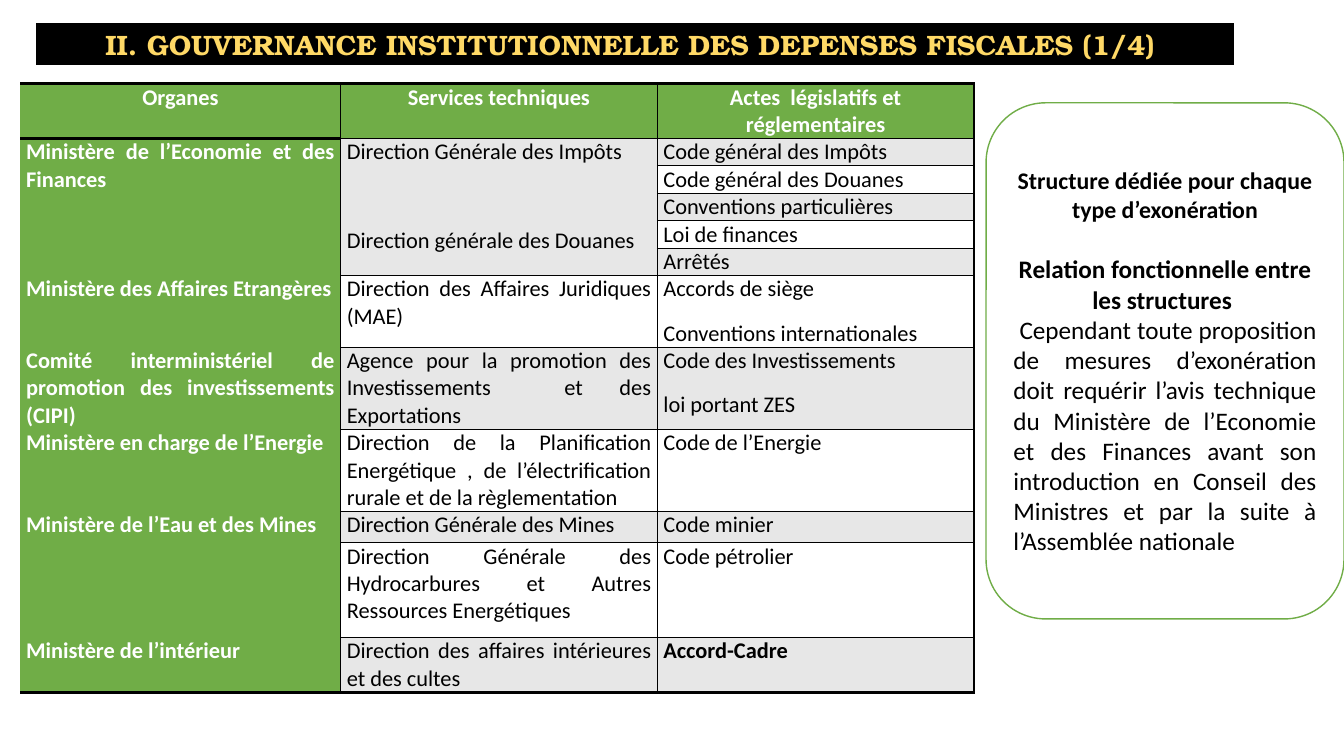
from dataclasses import dataclass

from lxml import etree
from pptx import Presentation
from pptx.dml.color import RGBColor
from pptx.enum.shapes import MSO_SHAPE
from pptx.enum.text import MSO_ANCHOR, PP_ALIGN
from pptx.oxml.ns import qn
from pptx.util import Inches, Pt

RECT, ROUND_RECT = MSO_SHAPE.RECTANGLE, MSO_SHAPE.ROUNDED_RECTANGLE
CENTER, JUSTIFY = PP_ALIGN.CENTER, PP_ALIGN.JUSTIFY
MIDDLE = MSO_ANCHOR.MIDDLE

BLACK = RGBColor(0x00, 0x00, 0x00)
WHITE = RGBColor(0xFF, 0xFF, 0xFF)
GREEN = RGBColor(0x70, 0xAD, 0x47)
GREY = RGBColor(0xE7, 0xE7, 0xE7)
GOLD = RGBColor(0xFF, 0xD9, 0x66)

BLANK_LAYOUT = 6
COL_WIDTHS = (3.18, 3.14, 3.14)
HEADERS = ("Organes", "Services techniques", "Actes  législatifs et réglementaires")
HEADER_HEIGHT = 0.53


@dataclass
class Row:
    """One body row; an empty organ or service continues the cell above."""
    height: float
    organ: str
    service: str
    acts: str
    service_gap: float = 6
    bold_act: bool = False


ROWS = (
    Row(0.27, "Ministère de l’Economie et des Finances",
        "Direction Générale des Impôts\nDirection générale des Douanes",
        "Code général des Impôts", service_gap=37.5),
    Row(0.27, "", "", "Code général des Douanes"),
    Row(0.27, "", "", "Conventions particulières"),
    Row(0.27, "", "", "Loi de finances"),
    Row(0.27, "", "", "Arrêtés"),
    Row(0.7, "Ministère des Affaires Etrangères",
        "Direction des Affaires Juridiques (MAE)",
        "Accords de siège\nConventions internationales"),
    Row(0.8, "Comité interministériel de promotion des investissements (CIPI)",
        "Agence pour la promotion des Investissements  et des Exportations ",
        "Code des Investissements\nloi portant ZES"),
    Row(0.8, "Ministère en charge de l’Energie",
        "Direction de la Planification Energétique , de l’électrification rurale "
        "et de la règlementation", "Code de l’Energie"),
    Row(0.31, "Ministère de l’Eau et des Mines ", "Direction Générale des Mines",
        "Code minier"),
    Row(0.94, "", "Direction Générale des Hydrocarbures et Autres Ressources Energétiques",
        "Code pétrolier"),
    Row(0.54, "Ministère de l’intérieur",
        "Direction des affaires intérieures et des cultes", "Accord-Cadre", bold_act=True),
)


def add_text(tf, text: str, *, size: float = 16, color: RGBColor = BLACK,
             bold: bool = False, font: str = "Calibri", align=JUSTIFY,
             before: float = 0, after: float = 0) -> None:
    """Write a paragraph, filling the first one while it is still empty."""
    p = tf.paragraphs[0]
    if p.runs:
        p = tf.add_paragraph()
    p.alignment = align
    p.space_before, p.space_after = Pt(before), Pt(after)
    r = p.add_run()
    r.text = text
    r.font.name, r.font.size = font, Pt(size)
    r.font.bold = bold
    r.font.color.rgb = color


def add_box(s, kind, left: float, top: float, width: float, height: float,
            fill: RGBColor, line: RGBColor, line_width: float):
    sp = s.shapes.add_shape(kind, Inches(left), Inches(top), Inches(width), Inches(height))
    sp.shadow.inherit = False
    sp.fill.solid()
    sp.fill.fore_color.rgb = fill
    sp.line.color.rgb = line
    sp.line.width = Pt(line_width)
    tf = sp.text_frame
    tf.word_wrap = True
    tf.vertical_anchor = MIDDLE
    return tf


def set_borders(cell, left: float, right: float, top: float, bottom: float) -> None:
    """Border widths in points; zero hides the side."""
    tc_pr = cell._tc.get_or_add_tcPr()
    for side, width in zip("LRTB", (left, right, top, bottom)):
        ln = etree.SubElement(tc_pr, qn(f"a:ln{side}"), w=str(int(Pt(width))))
        if width:
            fill = etree.SubElement(ln, qn("a:solidFill"))
            etree.SubElement(fill, qn("a:srgbClr"), val=str(BLACK))
        else:
            etree.SubElement(ln, qn("a:noFill"))


def style_cell(cell, fill: RGBColor, borders: tuple[float, float, float, float]) -> None:
    set_borders(cell, *borders)
    cell.fill.solid()
    cell.fill.fore_color.rgb = fill
    cell.margin_left = cell.margin_right = Inches(0.06)
    cell.margin_top = cell.margin_bottom = 0


def fill_cell(cell, text: str, gap: float = 6, **fmt) -> None:
    for i, line in enumerate(text.split("\n")):
        add_text(cell.text_frame, line, before=gap if i else 6, after=6, **fmt)


def merge_down(table, col: int, texts: list[str]) -> None:
    """Merge each text with the empty cells below it."""
    starts = [i for i, text in enumerate(texts, 1) if text] + [len(texts) + 1]
    for first, following in zip(starts, starts[1:]):
        if following - first > 1:
            table.cell(first, col).merge(table.cell(following - 1, col))


def add_governance_table(s) -> None:
    heights = [HEADER_HEIGHT] + [row.height for row in ROWS]
    table = s.shapes.add_table(len(heights), len(COL_WIDTHS), Inches(0.2), Inches(0.83),
                               Inches(sum(COL_WIDTHS)), Inches(sum(heights))).table
    for column, width in zip(table.columns, COL_WIDTHS):
        column.width = Inches(width)
    for line, height in zip(table.rows, heights):
        line.height = Inches(height)

    # Header
    for col, header in enumerate(HEADERS):
        cell = table.cell(0, col)
        style_cell(cell, GREEN, (1 if col else 0, 1, 2, 1 if col else 2))
        fill_cell(cell, header, color=WHITE, bold=True, align=CENTER)

    # Body
    for i, row in enumerate(ROWS, 1):
        organ, service, acts = (table.cell(i, col) for col in range(3))
        band = GREY if i % 2 else WHITE
        last = i == len(ROWS)
        style_cell(organ, GREEN, (0, 1, 2 if i == 1 else 0, 2 if last else 0))
        for cell in (service, acts):
            style_cell(cell, band, (1, 1, 1, 2 if last else 1))
        if row.organ:
            fill_cell(organ, row.organ, color=WHITE, bold=True)
        if row.service:
            fill_cell(service, row.service, gap=row.service_gap)
        fill_cell(acts, row.acts, bold=row.bold_act)
    merge_down(table, 0, [row.organ for row in ROWS])
    merge_down(table, 1, [row.service for row in ROWS])


def main() -> None:
    prs = Presentation()
    prs.slide_width, prs.slide_height = Inches(13.33), Inches(7.5)
    s = prs.slides.add_slide(prs.slide_layouts[BLANK_LAYOUT])

    # Title bar
    tf = add_box(s, RECT, 0.35, 0.22, 11.9, 0.44, BLACK, WHITE, 1.5)
    add_text(tf, "II. GOUVERNANCE INSTITUTIONNELLE DES DEPENSES FISCALES (1/4) ",
             size=20, color=GOLD, bold=True, font="TeX Gyre Bonum", align=CENTER)

    add_governance_table(s)

    # Side note
    tf = add_box(s, ROUND_RECT, 9.78, 1.02, 3.55, 5.12, WHITE, GREEN, 1)
    add_text(tf, "Structure dédiée pour chaque type d’exonération",
             size=17, bold=True, align=CENTER)
    add_text(tf, "Relation fonctionnelle entre les structures ",
             size=18, bold=True, align=CENTER, before=22)
    add_text(tf, " Cependant toute proposition de mesures d’exonération doit requérir "
             "l’avis technique du Ministère de l’Economie et des Finances avant son "
             "introduction en Conseil des Ministres et par la suite à l’Assemblée nationale",
             size=18)

    prs.save("out.pptx")


if __name__ == "__main__":
    main()
